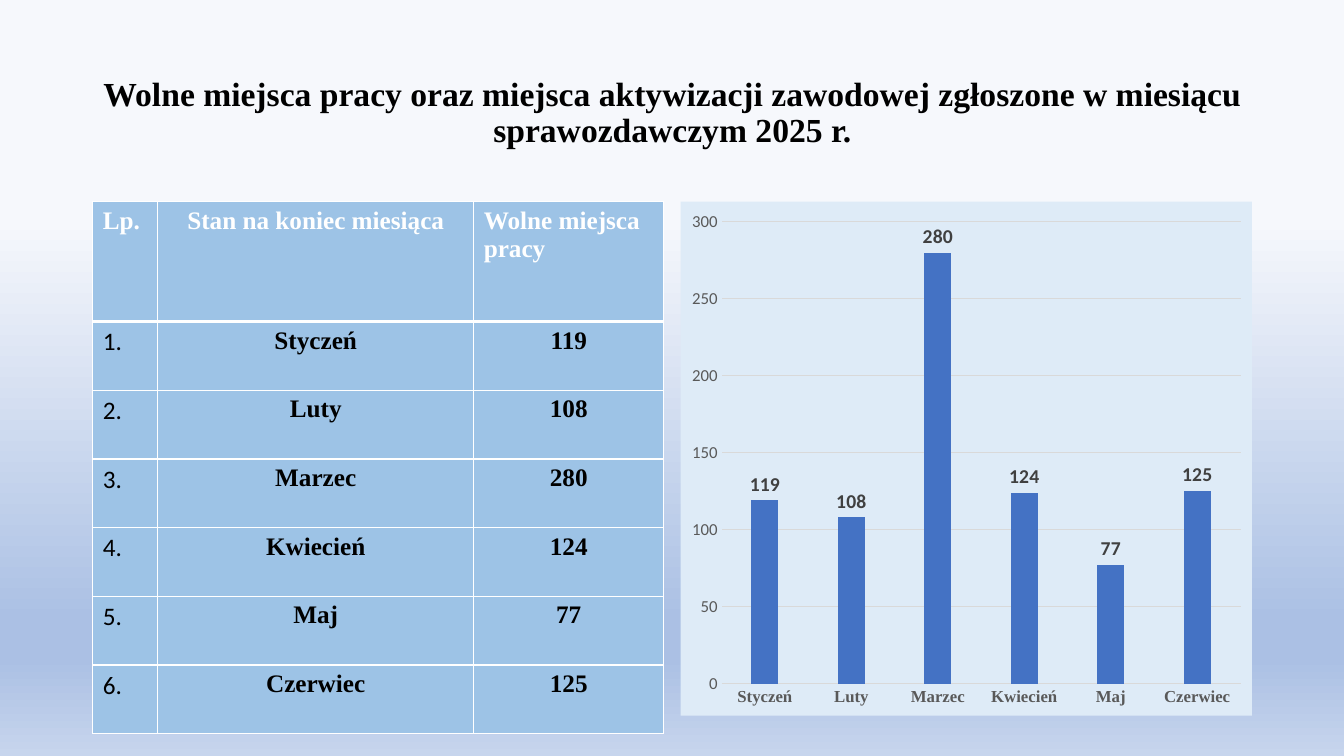
from dataclasses import dataclass

from lxml.etree import SubElement
from pptx import Presentation
from pptx.chart.data import CategoryChartData
from pptx.dml.color import RGBColor
from pptx.enum.chart import XL_CHART_TYPE, XL_LABEL_POSITION, XL_TICK_MARK
from pptx.enum.text import MSO_ANCHOR, MSO_AUTO_SIZE, PP_ALIGN
from pptx.oxml import parse_xml
from pptx.oxml.ns import nsdecls, qn
from pptx.util import Inches, Length, Pt


@dataclass(frozen=True)
class Theme:
    serif: str = "Times New Roman"
    sans: str = "Calibri"
    black: str = "000000"
    white: str = "FFFFFF"
    cell: str = "9DC3E6"
    chart: str = "DEEBF7"
    bar: str = "4472C4"
    grid: str = "D9D9D9"
    axis: str = "595959"
    label: str = "404040"
    title_size: int = 24
    table_size: int = 18
    label_size: int = 14
    axis_size: int = 12
    background: tuple = ((29, "F6F8FC"), (82, "ABC0E4"), (87, "ABC0E4"), (100, "C7D5ED"))


@dataclass(frozen=True)
class Box:
    """Left, top, width and height in percent of the slide."""
    left: float
    top: float
    width: float
    height: float

    def place(self) -> tuple:
        return (share(W, self.left), share(H, self.top),
                share(W, self.width), share(H, self.height))


@dataclass(frozen=True)
class Month:
    name: str
    vacancies: int


@dataclass(frozen=True)
class Column:
    heading: str
    width: float  # percent of the table's width
    heading_align: PP_ALIGN
    align: PP_ALIGN
    font: str
    bold: bool


THEME = Theme()
W, H = Inches(13.33), Inches(7.5)
TITLE_BOX = Box(6.9, 5.33, 86.25, 19.33)
TABLE_BOX = Box(6.9, 26.67, 42.5, 70.4)
CHART_BOX = Box(50.65, 26.67, 42.5, 68)
HEADER_HEIGHT, ROW_HEIGHT = 15.87, 9.09

TITLE = ("Wolne miejsca pracy oraz miejsca aktywizacji zawodowej "
         "zgłoszone w miesiącu sprawozdawczym 2025 r.")
MONTHS = [Month("Styczeń", 119), Month("Luty", 108), Month("Marzec", 280),
          Month("Kwiecień", 124), Month("Maj", 77), Month("Czerwiec", 125)]
COLUMNS = [
    Column("Lp.", 11.4, PP_ALIGN.LEFT, PP_ALIGN.LEFT, THEME.sans, False),
    Column("Stan na koniec miesiąca", 55.3, PP_ALIGN.CENTER, PP_ALIGN.CENTER, THEME.serif, True),
    Column("Wolne miejsca pracy", 33.3, PP_ALIGN.LEFT, PP_ALIGN.CENTER, THEME.serif, True),
]


def share(total: int, percent: float) -> Length:
    return Length(round(total * percent / 100))


def style(font, name: str, size: int, color: str, bold: bool) -> None:
    font.name, font.size, font.bold = name, Pt(size), bold
    font.color.rgb = RGBColor.from_string(color)


def add_background(s) -> None:
    fill = s.background.fill
    fill.gradient()
    fill.gradient_angle = 270
    stops = s.background._cSld.find(".//" + qn("a:gsLst"))
    stops.clear()
    for position, color in THEME.background:
        stop = SubElement(stops, qn("a:gs"), pos=str(position * 1000))
        SubElement(stop, qn("a:srgbClr"), val=color)


def add_title(s) -> None:
    sp = s.shapes.title
    sp.left, sp.top, sp.width, sp.height = TITLE_BOX.place()
    tf = sp.text_frame
    tf.text = TITLE
    tf.auto_size = MSO_AUTO_SIZE.NONE
    tf.word_wrap = True
    tf.vertical_anchor = MSO_ANCHOR.MIDDLE
    p = tf.paragraphs[0]
    p.alignment, p.line_spacing = PP_ALIGN.CENTER, 0.9
    style(p.runs[0].font, THEME.serif, THEME.title_size, THEME.black, True)


def add_borders(cell, header: bool) -> None:
    tcPr = cell._tc.get_or_add_tcPr()
    for side in ("lnL", "lnR", "lnT", "lnB"):
        width = Pt(3 if header and side == "lnB" else 1)
        line = SubElement(tcPr, qn(f"a:{side}"), w=str(width))
        SubElement(SubElement(line, qn("a:solidFill")), qn("a:srgbClr"), val=THEME.white)


def fill_cell(cell, text: str, column: Column, header: bool) -> None:
    add_borders(cell, header)
    cell.fill.solid()
    cell.fill.fore_color.rgb = RGBColor.from_string(THEME.cell)
    cell.text_frame.text = text
    p = cell.text_frame.paragraphs[0]
    p.alignment = column.heading_align if header else column.align
    style(p.runs[0].font, THEME.serif if header else column.font, THEME.table_size,
          THEME.white if header else THEME.black, header or column.bold)


def add_month_table(s) -> None:
    rows = [[column.heading for column in COLUMNS]]
    rows += [[f"{n}.", m.name, str(m.vacancies)] for n, m in enumerate(MONTHS, 1)]
    place = TABLE_BOX.place()
    table = s.shapes.add_table(len(rows), len(COLUMNS), *place).table
    table.horz_banding = False
    for i, column in enumerate(COLUMNS):
        table.columns[i].width = share(place[2], column.width)
    for i, texts in enumerate(rows):
        table.rows[i].height = share(H, ROW_HEIGHT if i else HEADER_HEIGHT)
        for j, text in enumerate(texts):
            fill_cell(table.cell(i, j), text, COLUMNS[j], header=i == 0)


def add_month_chart(s) -> None:
    data = CategoryChartData()
    data.categories = [m.name for m in MONTHS]
    data.add_series("Wolne miejsca pracy", [m.vacancies for m in MONTHS])
    chart = s.shapes.add_chart(XL_CHART_TYPE.COLUMN_CLUSTERED, *CHART_BOX.place(), data).chart
    chart.has_legend = chart.has_title = False
    style(chart.font, THEME.sans, 10, THEME.black, False)

    # Chart area
    chart._chartSpace.find(qn("c:chart")).addnext(parse_xml(
        f'<c:spPr {nsdecls("c", "a")}><a:solidFill><a:srgbClr val="{THEME.chart}"/>'
        '</a:solidFill><a:ln><a:noFill/></a:ln></c:spPr>'))

    # Bars and labels
    plot = chart.plots[0]
    plot.gap_width, plot.overlap, plot.vary_by_categories = 219, -27, False
    bars = plot.series[0].format.fill
    bars.solid()
    bars.fore_color.rgb = RGBColor.from_string(THEME.bar)
    plot.has_data_labels = True
    labels = plot.data_labels
    labels.show_value, labels.position = True, XL_LABEL_POSITION.OUTSIDE_END
    style(labels.font, THEME.sans, THEME.label_size, THEME.label, True)

    # Axes
    months, values = chart.category_axis, chart.value_axis
    for axis, font, bold in ((months, THEME.serif, True), (values, THEME.sans, False)):
        axis.major_tick_mark = axis.minor_tick_mark = XL_TICK_MARK.NONE
        style(axis.tick_labels.font, font, THEME.axis_size, THEME.axis, bold)
    values.minimum_scale, values.maximum_scale, values.major_unit = 0, 300, 50
    values.format.line.fill.background()
    values.has_major_gridlines = True
    for line in (months.format.line, values.major_gridlines.format.line):
        line.width = Pt(0.75)
        line.color.rgb = RGBColor.from_string(THEME.grid)


def main() -> None:
    prs = Presentation()
    prs.slide_width, prs.slide_height = W, H
    s = prs.slides.add_slide(prs.slide_layouts[5])
    add_background(s)
    add_title(s)
    add_month_table(s)
    add_month_chart(s)
    prs.save("out.pptx")


if __name__ == "__main__":
    main()
